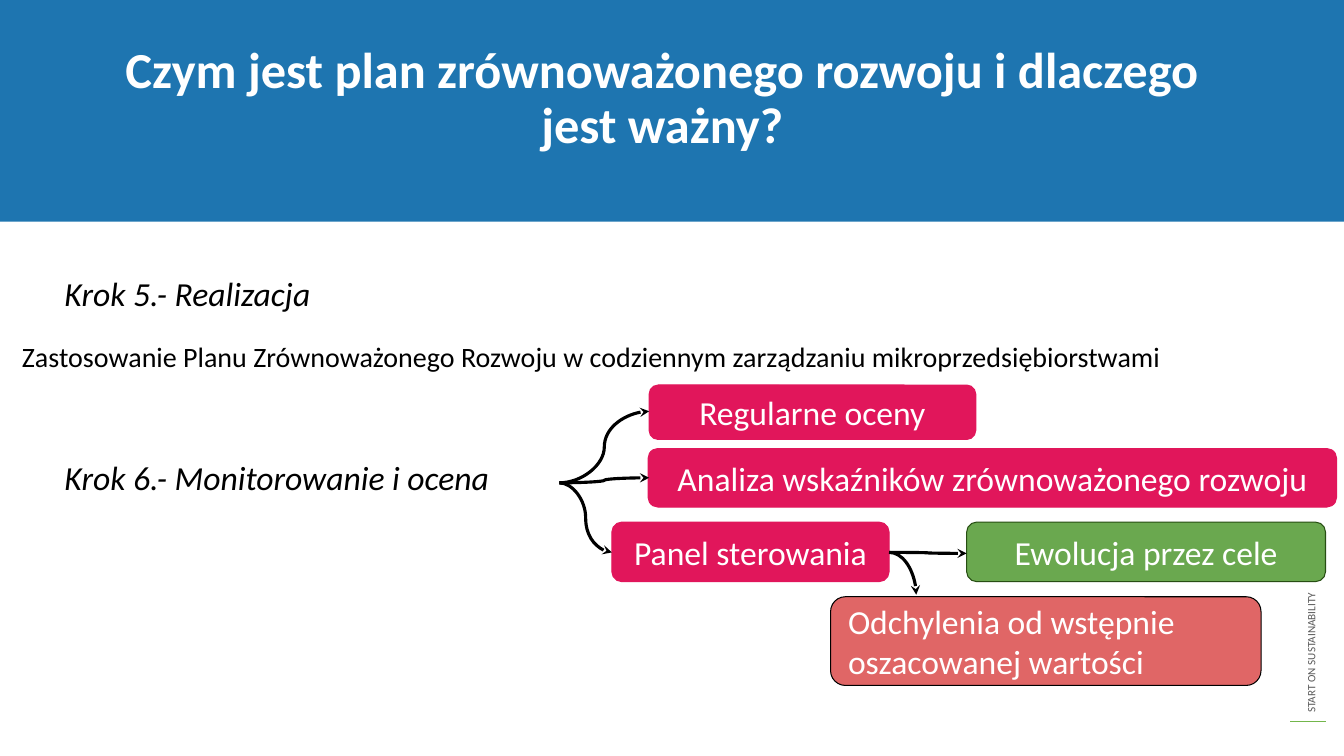
from lxml import etree
from pptx import Presentation
from pptx import util as u
from pptx.dml.color import RGBColor
from pptx.enum import shapes, text
from pptx.oxml import ns

PX = 9144
LEFT, MID, JUST = text.PP_ALIGN.LEFT, text.PP_ALIGN.CENTER, text.PP_ALIGN.JUSTIFY
TOP, CORE = text.MSO_ANCHOR.TOP, text.MSO_ANCHOR.MIDDLE
KIND = shapes.MSO_SHAPE


def rgb(code):
    return RGBColor.from_string(code)


def write(shape, words, size, color, align, pads, anchor=TOP, bold=False, slant=False, lead=1.0, gap=0):
    frame = shape.text_frame
    frame.word_wrap = True
    frame.vertical_anchor = anchor
    frame.margin_left = frame.margin_right = pads[0] * PX
    frame.margin_top = frame.margin_bottom = pads[1] * PX
    para = frame.paragraphs[0]
    para.alignment = align
    para.line_spacing = lead
    para.space_before = u.Pt(gap)
    run = para.add_run()
    run.text = words
    font = run.font
    font.name, font.size = "Calibri", u.Pt(size)
    font.bold, font.italic = bold, slant
    font.color.rgb = rgb(color)


deck = Presentation()
deck.slide_width, deck.slide_height = u.Inches(13.333), u.Inches(7.5)
slide = deck.slides.add_slide(deck.slide_layouts[6])
items = slide.shapes

side = items.add_textbox(1078 * PX, 482 * PX, 446 * PX, 24 * PX)
side.rotation = 270
write(side, "START ON SUSTAINABILITY", 8, "595959", LEFT, (10, 5))

band = items.add_shape(KIND.RECTANGLE, 0, 0, deck.slide_width, 220 * PX)
band.shadow.inherit = False
band.fill.solid()
band.fill.fore_color.rgb = rgb("1E75B0")
band.line.fill.background()

title = items.add_textbox(84 * PX, 40 * PX, 1146 * PX, 133 * PX)
write(title, "Czym jest plan zrównoważonego rozwoju i dlaczego jest ważny?",
      36, "FFFFFF", MID, (10, 5), bold=True, lead=0.9, gap=8)

notes = [
    ("Krok 6.- Monitorowanie i ocena", 54, 443, 501, 72, 24, True, 1.0),
    ("Krok 5.- Realizacja", 54, 241, 388, 92, 24, True, 1.5),
    ("Zastosowanie Planu Zrównoważonego Rozwoju w codziennym zarządzaniu mikroprzedsiębiorstwami",
     12, 310, 1250, 82, 20, False, 1.5),
]
for words, x, y, w, h, size, slant, lead in notes:
    note = items.add_textbox(x * PX, y * PX, w * PX, h * PX)
    write(note, words, size, "000000", JUST, (10, 10), slant=slant, lead=lead, gap=8)

cards = [
    ("Regularne oceny", 644, 382, 324, 54, "E1165B", "E1165B", MID),
    ("Analiza wskaźników zrównoważonego rozwoju", 643, 445, 683, 58, "E1165B", "E1165B", MID),
    ("Panel sterowania", 607, 518, 275, 59, "E1165B", "E1165B", MID),
    ("Ewolucja przez cele", 959, 518, 356, 59, "6AA84F", "274E13", MID),
    ("Odchylenia od wstępnie oszacowanej wartości", 824, 592, 427, 88, "E06666", "000000", LEFT),
]
for words, x, y, w, h, fill, edge, align in cards:
    card = items.add_shape(KIND.ROUNDED_RECTANGLE, x * PX, y * PX, w * PX, h * PX)
    card.shadow.inherit = False
    card.fill.solid()
    card.fill.fore_color.rgb = rgb(fill)
    card.line.color.rgb = rgb(edge)
    card.line.width = u.Pt(0.75)
    write(card, words, 24, "FFFFFF", align, (13, 13), CORE)

links = [
    ("line", 1280, 716, 1315, 716, "73B64B", 1),
    ("curvedConnector3", 555, 479, 644, 408, "000000", 2.25),
    ("curvedConnector3", 555, 479, 644, 474, "000000", 2.25),
    ("curvedConnector3", 555, 479, 607, 548, "000000", 2.25),
    ("curvedConnector3", 882, 548, 959, 549, "010101", 2.25),
    ("curvedConnector2", 882, 548, 909, 590, "010101", 2.25),
]
for form, x, y, right, low, color, width in links:
    link = items.add_connector(shapes.MSO_CONNECTOR.STRAIGHT, x * PX, y * PX, right * PX, low * PX)
    link.line.color.rgb = rgb(color)
    link.line.width = u.Pt(width)
    prop = link._element.spPr
    prop.find(ns.qn("a:prstGeom")).set("prst", form)
    if form != "line":
        etree.SubElement(prop.find(ns.qn("a:ln")), ns.qn("a:tailEnd"), type="stealth")
    etree.SubElement(prop, ns.qn("a:effectLst"))

deck.save("out.pptx")
